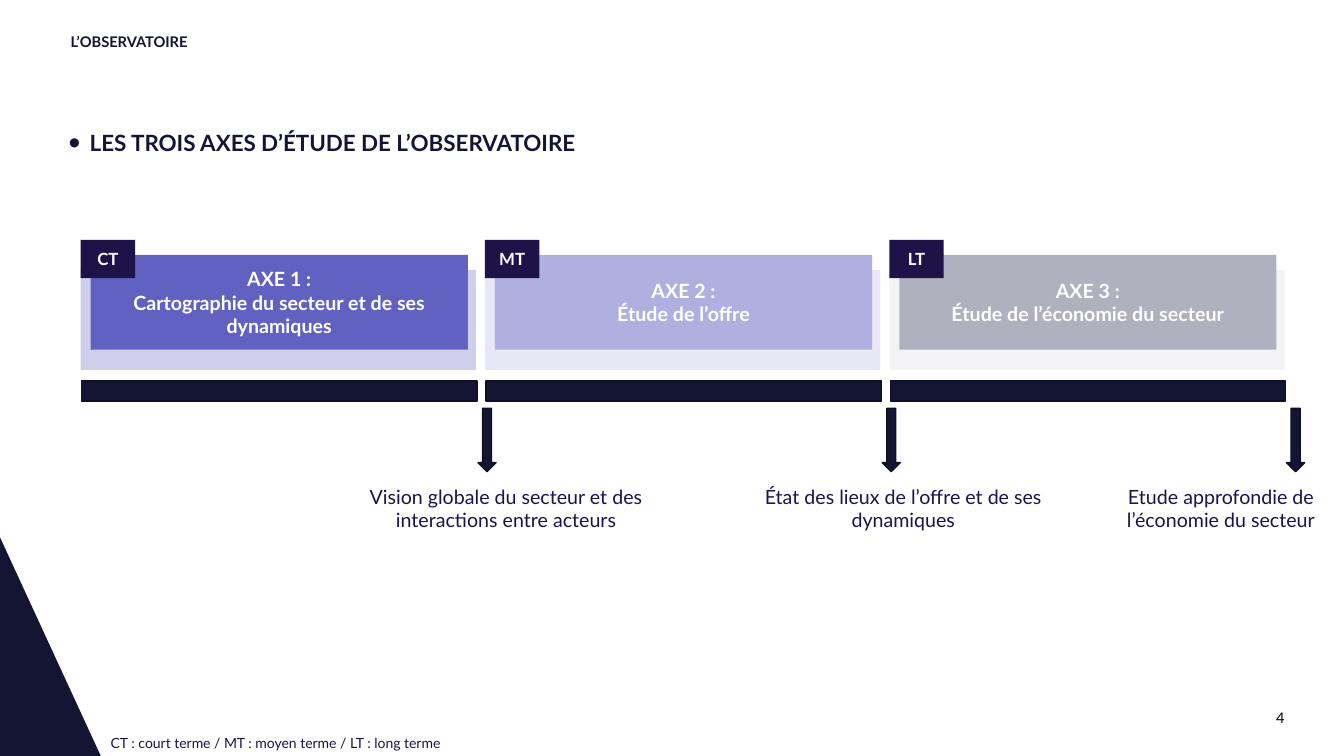
import pptx
import pptx.dml.color
import pptx.enum.shapes
import pptx.enum.text
import pptx.oxml.ns
import pptx.util
from dataclasses import dataclass
from lxml import etree

Inches = pptx.util.Inches
Shapes = pptx.enum.shapes.MSO_SHAPE
Align = pptx.enum.text.PP_ALIGN
Anchor = pptx.enum.text.MSO_ANCHOR

SECTION = "L’OBSERVATOIRE"
HEADING = "LES TROIS AXES D’ÉTUDE DE L’OBSERVATOIRE"
FOOTNOTE = "CT : court terme / MT : moyen terme / LT : long terme"
PAGE = "4"
# term, card lines, card colour, panel colour, panel opacity in percent
AXES = [
    ("CT", ["AXE 1 :", "Cartographie du secteur et de ses dynamiques"],
     "6161C1", "6161C1", 30),
    ("MT", ["AXE 2 :", "Étude de l’offre"], "B0B0E0", "B0B0E0", 30),
    ("LT", ["AXE 3 :", "Étude de l’économie du secteur"],
     "B0B0BE", "F3F3F5", 100),
]
# result, left, width
RESULTS = [
    ("Vision globale du secteur et des interactions entre acteurs", 3.5, 3.04),
    ("État des lieux de l’offre et de ses dynamiques", 7.48, 2.96),
    ("Etude approfondie de l’économie du secteur", 10.89, 2.44),
]


@dataclass(frozen=True)
class Theme:
    font: str = "Lato"
    navy: str = "141433"
    edge: str = "0F0F26"
    violet: str = "1E1348"
    white: str = "FFFFFF"
    black: str = "000000"
    heading: float = 16
    body: float = 14
    tag: float = 12
    small: float = 10.5
    note: float = 10


THEME = Theme()
WIDTH, HEIGHT = 13.33, 7.5
COLUMN_LEFT, COLUMN_PITCH, COLUMN_WIDTH = 0.8, 4.01, 3.92
# vertical place and height of each row
TAG_ROW, CARD_ROW, PANEL_ROW = (2.38, 0.38), (2.53, 0.94), (2.68, 0.99)
BAR_ROW, ARROW_ROW, RESULT_ROW = (3.78, 0.2), (4.05, 0.63), (4.76, 0.56)
MARGIN = 0.6


def rgb(value):
    return pptx.dml.color.RGBColor.from_string(value)


def place(shape, left, top, width, height):
    shape.left, shape.top = Inches(left), Inches(top)
    shape.width, shape.height = Inches(width), Inches(height)


def write(shape, lines, size=THEME.body, color=THEME.violet, bold=False,
          align=Align.LEFT, anchor=Anchor.TOP, insets=(0.1, 0.05, 0.1, 0.05),
          spacing=1.0, bullet_indent=None):
    frame = shape.text_frame
    frame.word_wrap = True
    frame.auto_size = pptx.enum.text.MSO_AUTO_SIZE.NONE
    frame.vertical_anchor = anchor
    (frame.margin_left, frame.margin_top,
     frame.margin_right, frame.margin_bottom) = map(Inches, insets)
    frame.text = "\n".join(lines)
    for paragraph in frame.paragraphs:
        if bullet_indent:
            add_bullet(paragraph, bullet_indent)
        paragraph.alignment = align
        paragraph.line_spacing = spacing
        paragraph.space_before = pptx.util.Pt(0)
        for run in paragraph.runs:
            run.font.name, run.font.size = THEME.font, pptx.util.Pt(size)
            run.font.bold = bold
            run.font.color.rgb = rgb(color)


def add_bullet(paragraph, indent):
    properties = paragraph._p.get_or_add_pPr()
    properties.set("marL", str(Inches(indent)))
    properties.set("indent", str(-Inches(indent)))
    for tag, name, value in (("a:buSzPct", "val", "150000"),
                             ("a:buFont", "typeface", "Arial"),
                             ("a:buChar", "char", "•")):
        etree.SubElement(properties, pptx.oxml.ns.qn(tag)).set(name, value)


def paint(shape, fill, line=None, opacity=100):
    shape.shadow.inherit = False
    shape.fill.solid()
    shape.fill.fore_color.rgb = rgb(fill)
    if opacity < 100:
        color = shape.fill._xPr.find(".//" + pptx.oxml.ns.qn("a:srgbClr"))
        alpha = etree.SubElement(color, pptx.oxml.ns.qn("a:alpha"))
        alpha.set("val", str(opacity * 1000))
    if line:
        shape.line.color.rgb = rgb(line)
        shape.line.width = pptx.util.Pt(1)
    else:
        shape.line.fill.background()


def add_block(slide, kind, left, row, width, fill, **look):
    shape = slide.shapes.add_shape(kind, 0, 0, 0, 0)
    place(shape, left, row[0], width, row[1])
    paint(shape, fill, **look)
    return shape


def add_label(slide, text, left, top, width, height, **look):
    box = slide.shapes.add_textbox(0, 0, 0, 0)
    place(box, left, top, width, height)
    write(box, [text], **look)


def add_corner(slide):
    top = 5.33
    builder = slide.shapes.build_freeform(0, Inches(top))
    builder.add_line_segments([(Inches(1), Inches(HEIGHT)),
                               (0, Inches(HEIGHT))], close=True)
    paint(builder.convert_to_shape(), THEME.navy)


def add_axis(slide, left, axis):
    term, lines, card_color, panel_color, opacity = axis
    centred = dict(color=THEME.white, bold=True, align=Align.CENTER,
                   anchor=Anchor.MIDDLE)
    add_block(slide, Shapes.RECTANGLE, left, PANEL_ROW, COLUMN_WIDTH,
              panel_color, opacity=opacity)
    card = add_block(slide, Shapes.RECTANGLE, left + 0.1, CARD_ROW,
                     COLUMN_WIDTH - 0.18, card_color)
    write(card, lines, **centred)
    add_block(slide, Shapes.FLOWCHART_PROCESS, left + 0.01, BAR_ROW,
              COLUMN_WIDTH, THEME.navy, line=THEME.edge)
    add_block(slide, Shapes.DOWN_ARROW, left + 3.94, ARROW_ROW, 0.18,
              THEME.navy, line=THEME.edge)
    tag = add_block(slide, Shapes.RECTANGLE, left, TAG_ROW, 0.54, THEME.violet)
    write(tag, [term], size=THEME.tag, **centred)


def main():
    presentation = pptx.Presentation()
    presentation.slide_width = Inches(WIDTH)
    presentation.slide_height = Inches(HEIGHT)
    slide = presentation.slides.add_slide(presentation.slide_layouts[1])

    title, heading = slide.shapes.title, slide.placeholders[1]
    place(title, MARGIN, 0.34, 5.91, 0.16)
    write(title, [SECTION], size=THEME.small, color=THEME.navy, bold=True,
          anchor=Anchor.MIDDLE, insets=(0.1, 0, 0.1, 0), spacing=0.9)
    place(heading, MARGIN, 1.23, WIDTH - 2 * MARGIN, 0.37)
    write(heading, [HEADING], size=THEME.heading, color=THEME.navy, bold=True,
          insets=(0.08, 0.05, 0.1, 0.05), bullet_indent=0.21)

    add_corner(slide)
    for index, axis in enumerate(AXES):
        add_axis(slide, COLUMN_LEFT + index * COLUMN_PITCH, axis)
    for result, left, width in RESULTS:
        add_label(slide, result, left, RESULT_ROW[0], width, RESULT_ROW[1],
                  align=Align.CENTER)
    add_label(slide, FOOTNOTE, 1, 7.21, 4.2, 0.32, size=THEME.note,
              anchor=Anchor.MIDDLE)
    add_label(slide, PAGE, 9.74, 7.03, 3, 0.18, size=THEME.small,
              color=THEME.black, align=Align.RIGHT, anchor=Anchor.MIDDLE,
              insets=(0, 0, 0, 0))
    presentation.save("out.pptx")


if __name__ == "__main__":
    main()
